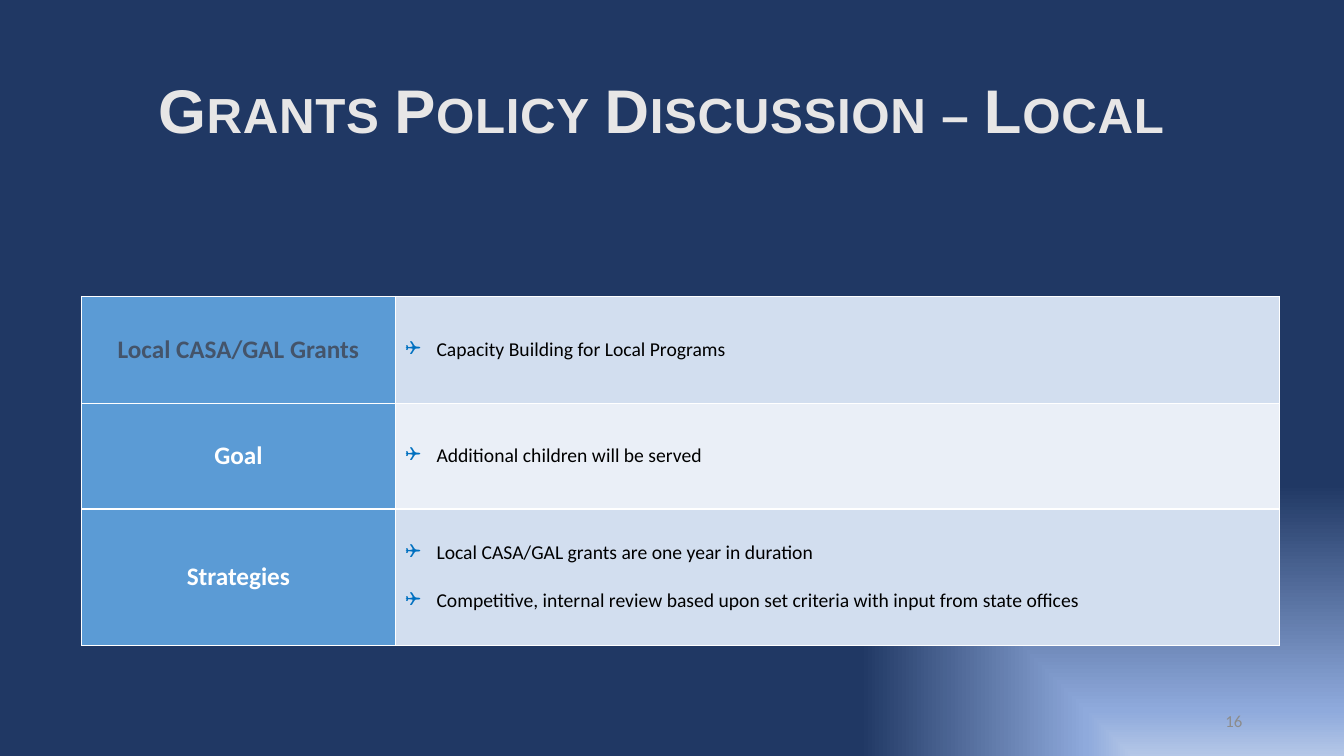
"""Build the local grants policy discussion slide with its three-row table."""
from lxml import etree
from pptx import Presentation
from pptx.dml.color import RGBColor
from pptx.enum.text import MSO_ANCHOR, PP_ALIGN
from pptx.oxml import parse_xml
from pptx.oxml.ns import nsdecls, qn
from pptx.util import Inches, Pt

CENTER, LEFT, RIGHT = PP_ALIGN.CENTER, PP_ALIGN.LEFT, PP_ALIGN.RIGHT
MIDDLE = MSO_ANCHOR.MIDDLE
WHITE = RGBColor(0xFF, 0xFF, 0xFF)
BLACK = RGBColor(0x00, 0x00, 0x00)
SLATE = RGBColor(0x44, 0x54, 0x6A)
BLUE = RGBColor(0x5B, 0x9B, 0xD5)
BAND_DARK = RGBColor(0xD2, 0xDE, 0xEF)
BAND_LIGHT = RGBColor(0xEA, 0xEF, 0xF7)
BULLET_BLUE = RGBColor(0x00, 0x70, 0xC0)
PALE = RGBColor(0xE7, 0xE6, 0xE6)
GREY = RGBColor(0x8C, 0x8C, 0x8C)
GRADIENT = [(0, "B4C7E7"), (12, "8FAADC"), (72, "203864"), (83, "203864"), (100, "203864")]

TITLE = dict(name="Arial", size=Pt(44), bold=True)
NUMBER = dict(name="Calibri", size=Pt(12), bold=False)
HEADING = dict(name="Calibri", size=Pt(18), bold=True)
DETAIL = dict(name="Calibri", size=Pt(14), bold=False)
COLUMNS = [3.11, 8.77]
ROWS = [
    (1.06, "Local CASA/GAL Grants", SLATE, BAND_DARK, ["Capacity Building for Local Programs"]),
    (1.05, "Goal", WHITE, BAND_LIGHT, ["Additional children will be served"]),
    (1.35, "Strategies", WHITE, BAND_DARK, [
        "Local CASA/GAL grants are one year in duration",
        "Competitive, internal review based upon set criteria with input from state offices",
    ]),
]


def write(paragraph, text, alignment, color, style):
    """Add one formatted run to a paragraph and return it."""
    paragraph.alignment = alignment
    run = paragraph.add_run()
    run.text = text
    for attribute, value in style.items():
        setattr(run.font, attribute, value)
    run.font.color.rgb = color
    return run


def style_cell(cell, color):
    """Fill a cell, centre it vertically and give it white borders."""
    cell.vertical_anchor = MIDDLE
    cell.fill.solid()
    cell.fill.fore_color.rgb = color
    properties = cell._tc.get_or_add_tcPr()
    for index, side in enumerate(("lnL", "lnR", "lnT", "lnB")):
        properties.insert(index, parse_xml(
            f'<a:{side} {nsdecls("a")} w="{Pt(1)}"><a:solidFill>'
            f'<a:srgbClr val="{WHITE}"/></a:solidFill></a:{side}>'))


presentation = Presentation()
presentation.slide_width = Inches(13.33)
presentation.slide_height = Inches(7.5)
slide = presentation.slides.add_slide(presentation.slide_layouts[6])

stops = "".join(f'<a:gs pos="{position * 1000}"><a:srgbClr val="{color}"/></a:gs>'
                for position, color in GRADIENT)
slide._element.cSld.insert(0, parse_xml(
    f'<p:bg {nsdecls("p", "a")}><p:bgPr><a:gradFill rotWithShape="1"><a:gsLst>{stops}</a:gsLst>'
    '<a:path path="rect"><a:fillToRect l="100000" t="100000"/></a:path>'
    '<a:tileRect r="-100000" b="-100000"/></a:gradFill><a:effectLst/></p:bgPr></p:bg>'))

text_boxes = [
    ((0.92, 0.4, 11.5, 1.45), "Grants Policy Discussion – Local", CENTER, PALE, TITLE),
    ((9.42, 6.95, 3, 0.4), "16", RIGHT, GREY, NUMBER),
]
for box, text, alignment, color, style in text_boxes:
    frame = slide.shapes.add_textbox(*map(Inches, box)).text_frame
    frame.word_wrap = True
    frame.vertical_anchor = MIDDLE
    run = write(frame.paragraphs[0], text, alignment, color, style)
    if style is TITLE:
        frame.paragraphs[0].line_spacing = 0.9
        run.font._element.set("cap", "small")
        run.font._element.set("spc", "50")

table = slide.shapes.add_table(
    len(ROWS), len(COLUMNS), Inches(0.81), Inches(2.94),
    Inches(sum(COLUMNS)), Inches(sum(row[0] for row in ROWS))).table
table.first_row = False
table.horz_banding = False
for column, width in zip(table.columns, COLUMNS):
    column.width = Inches(width)

for row, (height, heading, heading_color, band, details) in zip(table.rows, ROWS):
    row.height = Inches(height)
    heading_cell, detail_cell = row.cells
    style_cell(heading_cell, BLUE)
    style_cell(detail_cell, band)
    write(heading_cell.text_frame.paragraphs[0], heading, CENTER, heading_color, HEADING)
    frame = detail_cell.text_frame
    for index, detail in enumerate(details):
        paragraph = frame.add_paragraph() if index else frame.paragraphs[0]
        write(paragraph, detail, LEFT, BLACK, DETAIL)
        if index:
            paragraph.space_before = Pt(17)
        properties = paragraph._p.get_or_add_pPr()
        properties.set("marL", str(Inches(0.31)))
        properties.set("indent", str(-Inches(0.31)))
        bullet_color = etree.SubElement(properties, qn("a:buClr"))
        etree.SubElement(bullet_color, qn("a:srgbClr"), val=str(BULLET_BLUE))
        etree.SubElement(properties, qn("a:buFont"), typeface="Wingdings")
        etree.SubElement(properties, qn("a:buChar"), char="❑")

presentation.save("out.pptx")
